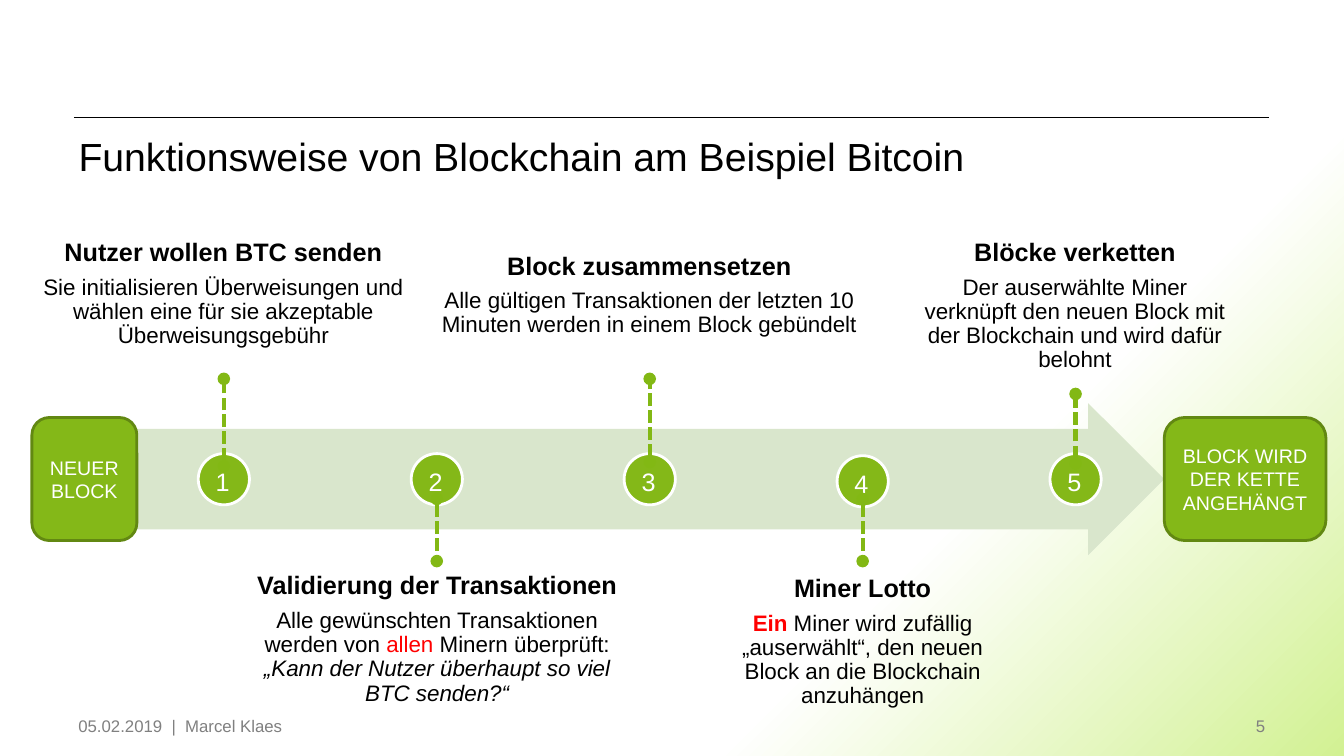
from lxml import etree
from pptx import Presentation, util as u
from pptx.dml.color import RGBColor
from pptx.enum import dml, shapes, text
from pptx.oxml import ns, parse_xml

COLUMNS, ROWS = 160, 90
GREEN, WHITE, BLACK, RED, GREY = "84B818", "FFFFFF", "000000", "FF0000", "808080"
LEFT, CENTER, RIGHT = text.PP_ALIGN.LEFT, text.PP_ALIGN.CENTER, text.PP_ALIGN.RIGHT
TOP, MIDDLE, BOTTOM = text.MSO_ANCHOR.TOP, text.MSO_ANCHOR.MIDDLE, text.MSO_ANCHOR.BOTTOM
tint = RGBColor.from_string

deck = Presentation()
deck.slide_width, deck.slide_height = u.Inches(13.3333), u.Inches(7.5)
page = deck.slides.add_slide(deck.slide_layouts[5])


def area(*cells):
    units = (deck.slide_width / COLUMNS, deck.slide_height / ROWS) * 2
    return [round(cell * unit) for cell, unit in zip(cells, units)]


def write(para, content, size, color, align=LEFT):
    para.text = content
    para.alignment = align
    for span in para.runs:
        span.font.name = "Arial"
        span.font.size = u.Pt(size)
        span.font.color.rgb = tint(color)


stops = "".join(
    f'<a:gs pos="{share}000"><a:srgbClr val="{color}"/></a:gs>'
    for share, color in [(0, WHITE), (70, WHITE), (100, "D2F193")]
)
background = parse_xml(
    f'<p:bg {ns.nsdecls("p", "a")}><p:bgPr><a:gradFill rotWithShape="1"><a:gsLst>{stops}</a:gsLst>'
    '<a:path path="circle"><a:fillToRect r="100000" b="100000"/></a:path></a:gradFill>'
    '<a:effectLst/></p:bgPr></p:bg>'
)
page.element.cSld.insert(0, background)

title = page.shapes.title
title.left, title.top, title.width, title.height = area(8.15, 13.9, 143.65, 9.25)
title.text_frame.vertical_anchor = MIDDLE
write(title.text_frame.paragraphs[0], "Funktionsweise von Blockchain am Beispiel Bitcoin", 28, BLACK)

arrow = page.shapes.add_shape(shapes.MSO_SHAPE.NOTCHED_RIGHT_ARROW, *area(7.2, 48, 131.4, 18.1))
arrow.adjustments[0], arrow.adjustments[1] = 0.661, 0.5
arrow.shadow.inherit = False
arrow.fill.solid()
arrow.fill.fore_color.rgb = tint("D9E6CC")
arrow.line.fill.background()

for left, width, label in [(3.8, 12.5, "NEUER BLOCK"), (138.6, 19.25, "BLOCK WIRD DER KETTE ANGEHÄNGT")]:
    end = page.shapes.add_shape(shapes.MSO_SHAPE.ROUNDED_RECTANGLE, *area(left, 49.7, width, 14.65))
    end.shadow.inherit = False
    end.fill.solid()
    end.fill.fore_color.rgb = tint(GREEN)
    end.line.color.rgb = tint("628812")
    end.line.width = u.Pt(2)
    end.text_frame.vertical_anchor = MIDDLE
    write(end.text_frame.paragraphs[0], label, 14, WHITE, CENTER)

steps = [
    ("Nutzer wollen BTC senden", (3.2, 28.2, 46.8, 14.75), BOTTOM, 54, 55.5, 45.1,
     [("Sie initialisieren Überweisungen und wählen eine für sie akzeptable Überweisungsgebühr", "")]),
    ("Validierung der Transaktionen", (27.7, 66.8, 48.7, 18.1), TOP, 54, 59.4, 66.8,
     [("Alle gewünschten Transaktionen werden von ", ""), ("allen ", "red"),
      ("Minern überprüft:\v", ""), ("„Kann der Nutzer überhaupt so viel BTC senden?“", "italic")]),
    ("Block zusammensetzen", (50, 27, 54.6, 14.65), BOTTOM, 54, 55, 45.1,
     [("Alle gültigen Transaktionen der letzten 10 Minuten werden in einem Block gebündelt", "")]),
    ("Miner Lotto", (85.4, 68, 34.6, 16.9), MIDDLE, 54.25, 59.4, 66.8,
     [("Ein ", "red bold"),
      ("Miner wird zufällig „auserwählt“, den neuen Block an die Blockchain anzuhängen", "")]),
    ("Blöcke verketten", (107.4, 28.6, 41.15, 15.7), MIDDLE, 54, 55.2, 46.9,
     [("Der auserwählte Miner verknüpft den neuen Block mit der Blockchain und wird dafür belohnt", "")]),
]
pitch, diameter = 25.35, 6.1
lines = []

for index, (heading, place, anchor, top, start, finish, body) in enumerate(steps):
    left = 23.6 + index * pitch
    circle = page.shapes.add_shape(shapes.MSO_SHAPE.OVAL, *area(left, top, diameter, diameter))
    circle.shadow.inherit = False
    circle.fill.solid()
    circle.fill.fore_color.rgb = tint(GREEN)
    circle.line.color.rgb = tint(WHITE)
    circle.line.width = u.Pt(2)
    circle.text_frame.vertical_anchor = TOP
    write(circle.text_frame.paragraphs[0], str(index + 1), 18, WHITE)

    box = page.shapes.add_textbox(*area(*place))
    frame = box.text_frame
    frame.word_wrap = True
    frame.vertical_anchor = anchor
    frame.margin_left = frame.margin_top = frame.margin_right = frame.margin_bottom = u.Inches(0.12)
    write(frame.paragraphs[0], heading, 18, BLACK, CENTER)
    frame.paragraphs[0].runs[0].font.bold = True
    detail = frame.add_paragraph()
    detail.alignment = CENTER
    for content, style in body:
        span = detail.add_run()
        span.text = content.rstrip("\v")
        span.font.name = "Arial"
        span.font.size = u.Pt(16)
        span.font.color.rgb = tint(RED if "red" in style else BLACK)
        span.font.bold = "bold" in style
        span.font.italic = "italic" in style
        if content.endswith("\v"):
            detail.add_line_break()
    for para in frame.paragraphs:
        para.line_spacing = 0.9
        para.space_after = u.Pt(6.3)

    center = left + diameter / 2
    lines.append((center, start, center, finish, "82B814", 3, True))

lines.append((8.8, 13.95, 151.1, 13.95, BLACK, 0.75, False))
for *ends, color, weight, dotted in lines:
    link = page.shapes.add_connector(shapes.MSO_CONNECTOR.STRAIGHT, *area(*ends))
    link.line.color.rgb = tint(color)
    link.line.width = u.Pt(weight)
    properties = link._element.spPr
    if dotted:
        link.line.dash_style = dml.MSO_LINE.SQUARE_DOT
        outline = properties.find(ns.qn("a:ln"))
        for tip in ("a:headEnd", "a:tailEnd"):
            etree.SubElement(outline, ns.qn(tip), type="oval")
    etree.SubElement(properties, ns.qn("a:effectLst"))

for left, width, content, align in [(8.15, 71.8, "05.02.2019  |  Marcel Klaes", LEFT), (117.7, 34.1, "5", RIGHT)]:
    footer = page.shapes.add_textbox(*area(left, 84.25, width, 3.95))
    footer.text_frame.word_wrap = True
    footer.text_frame.vertical_anchor = BOTTOM
    write(footer.text_frame.paragraphs[0], content, 12, GREY, align)

deck.save("out.pptx")
